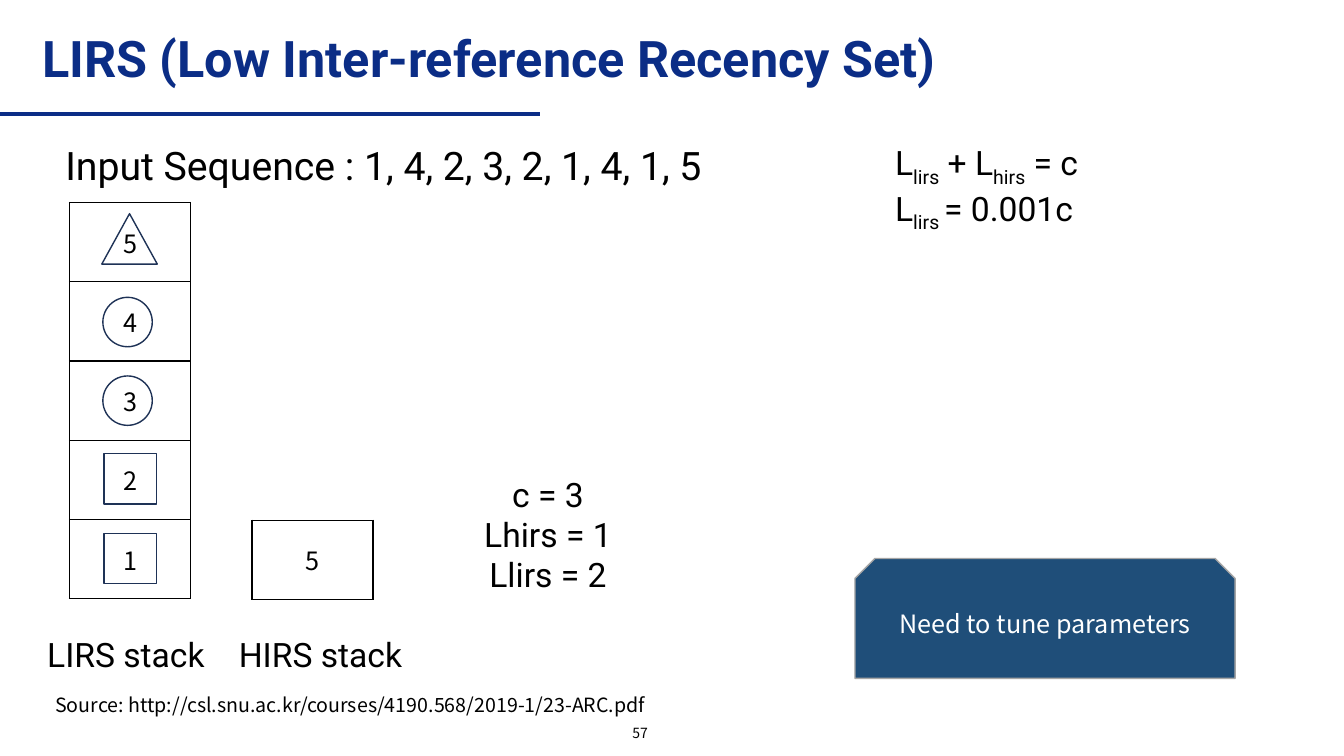
"""Build the LIRS replacement-policy slide."""
import dataclasses

import lxml.etree
import pptx
import pptx.dml.color
import pptx.enum.shapes
import pptx.enum.text
import pptx.oxml
import pptx.oxml.ns
import pptx.util

Inches = pptx.util.Inches
Pt = pptx.util.Pt
qn = pptx.oxml.ns.qn
SHAPE = pptx.enum.shapes.MSO_SHAPE
ALIGN = pptx.enum.text.PP_ALIGN
ANCHOR = pptx.enum.text.MSO_ANCHOR


@dataclasses.dataclass(frozen=True)
class Theme:
    """Fonts, colours and type sizes of the slide."""
    head: str = "Roboto"
    body: str = "Noto Sans CJK KR"
    navy: str = "0B2D86"
    outline: str = "1E3256"
    black: str = "000000"
    white: str = "FFFFFF"
    callout: str = "1F4E79"
    grey: str = "A5A5A5"
    title: int = 36
    sequence: int = 28
    label: int = 24
    cell: int = 18
    source: int = 14
    number: int = 10


T = Theme()


def rgb(value):
    """Return a colour from its hex digits."""
    return pptx.dml.color.RGBColor.from_string(value)


def write(tf, lines, size, font=T.head, color=T.black, align=ALIGN.LEFT, bold=False):
    """Fill a text frame; a line is a list of runs, every second one a subscript."""
    tf.word_wrap = True
    for i, line in enumerate(lines):
        p = tf.paragraphs[0] if i == 0 else tf.add_paragraph()
        p.alignment = align
        for j, text in enumerate(line):
            r = p.add_run()
            r.text = text
            r.font.size = Pt(size)
            r.font.name = font
            r.font.bold = bold
            r.font.color.rgb = rgb(color)
            if j % 2:
                r.font._element.set("baseline", "-25000")


def add_text(s, box, lines, size, anchor=ANCHOR.TOP, **style):
    """Add a text box."""
    tf = s.shapes.add_textbox(*map(Inches, box)).text_frame
    write(tf, lines, size, **style)
    tf.vertical_anchor = anchor


def add_title(s, text):
    """Place the title and the rule below it."""
    sp = s.shapes.title
    sp.left, sp.top, sp.width, sp.height = map(Inches, (0.32, 0.24, 10.41, 0.74))
    write(sp.text_frame, [[text]], T.title, color=T.navy, bold=True)
    sp.text_frame.vertical_anchor = ANCHOR.MIDDLE
    sp.text_frame.paragraphs[0].line_spacing = 0.9
    rule = s.shapes.add_connector(pptx.enum.shapes.MSO_CONNECTOR.STRAIGHT,
                                  0, Inches(1.13), Inches(5.36), Inches(1.13))
    rule.line.color.rgb = rgb(T.navy)
    rule.line.width = Pt(3)
    lxml.etree.SubElement(rule._element.spPr, qn("a:effectLst"))


def add_shape(s, kind, box, line, fill=None):
    """Add a flat preset shape."""
    sp = s.shapes.add_shape(kind, *map(Inches, box))
    sp.shadow.inherit = False
    sp.line.color.rgb = rgb(line)
    sp.line.width = Pt(1)
    if fill:
        sp.fill.solid()
        sp.fill.fore_color.rgb = rgb(fill)
    else:
        sp.fill.background()
    return sp


def add_border(cell):
    """Draw a thin line on all four sides of a cell."""
    tcPr = cell._tc.get_or_add_tcPr()
    for side in ("lnL", "lnR", "lnT", "lnB"):
        ln = lxml.etree.SubElement(tcPr, qn(f"a:{side}"), w=str(Pt(1)))
        fill = lxml.etree.SubElement(ln, qn("a:solidFill"))
        lxml.etree.SubElement(fill, qn("a:srgbClr"), val=T.black)


def add_stack(s, left, top, values):
    """Add a one-column table of stack entries."""
    width, row = 1.2, 0.786
    table = s.shapes.add_table(len(values), 1, Inches(left), Inches(top),
                               Inches(width), Inches(row * len(values))).table
    table.first_row = table.horz_banding = False
    for i, value in enumerate(values):
        cell = table.cell(i, 0)
        write(cell.text_frame, [[value]], T.cell, T.body, align=ALIGN.CENTER)
        cell.vertical_anchor = ANCHOR.MIDDLE
        add_border(cell)
        cell.fill.background()


def main():
    """Build and save the slide."""
    prs = pptx.Presentation()
    prs.slide_width, prs.slide_height = Inches(13.33), Inches(7.5)
    s = prs.slides.add_slide(prs.slide_layouts[5])

    add_title(s, "LIRS (Low Inter-reference Recency Set)")
    add_text(s, (0.55, 1.35, 12.14, 0.74),
             [["Input Sequence : 1, 4, 2, 3, 2, 1, 4, 1, 5"]], T.sequence)

    add_stack(s, 0.69, 2.01, "54321")
    add_stack(s, 2.5, 5.16, "5")
    markers = [
        (SHAPE.ISOSCELES_TRIANGLE, (1.01, 2.12, 0.55, 0.5)),
        (SHAPE.OVAL, (1.02, 2.95, 0.49, 0.49)),
        (SHAPE.OVAL, (1.02, 3.73, 0.49, 0.49)),
        (SHAPE.RECTANGLE, (1.03, 4.5, 0.52, 0.5)),
        (SHAPE.RECTANGLE, (1.03, 5.29, 0.52, 0.5)),
    ]
    for kind, box in markers:
        add_shape(s, kind, box, T.outline)
    for left, name in ((0.37, "LIRS stack"), (2.27, "HIRS stack")):
        add_text(s, (left, 6.24, 1.85, 0.5), [[name]], T.label)

    add_text(s, (4.51, 4.65, 1.85, 1.31), [["c = 3"], ["Lhirs = 1"], ["Llirs = 2"]],
             T.label, align=ALIGN.CENTER)
    add_text(s, (8.78, 1.36, 3, 0.91),
             [["L", "lirs", " + L", "hirs", " = c"], ["L", "lirs ", "= 0.001c"]], T.label)

    callout = add_shape(s, SHAPE.SNIP_2_SAME_RECTANGLE, (8.48, 5.54, 3.77, 1.19),
                        T.grey, T.callout)
    write(callout.text_frame, [["Need to tune parameters"]], T.cell, T.body, T.white,
          ALIGN.CENTER)
    callout.text_frame.vertical_anchor = ANCHOR.MIDDLE

    add_text(s, (0.45, 6.83, 6.62, 0.34),
             [["Source: http://csl.snu.ac.kr/courses/4190.568/2019-1/23-ARC.pdf"]],
             T.source, font=T.body)
    add_text(s, (4.85, 7.11, 3, 0.32), [["57"]], T.number, ANCHOR.MIDDLE,
             font=T.body, align=ALIGN.CENTER)
    prs.save("out.pptx")


if __name__ == "__main__":
    main()
